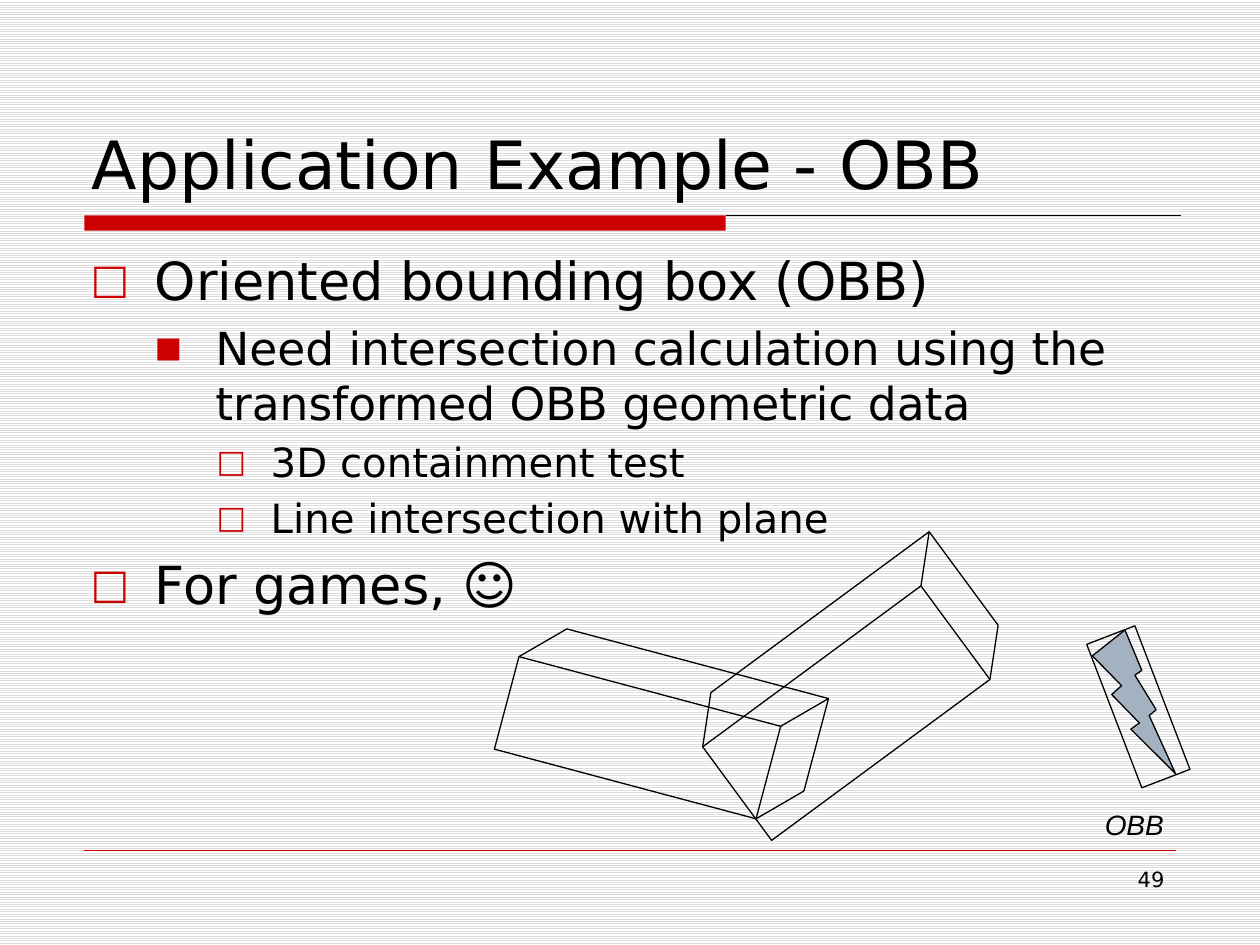
"""Build the slide about oriented bounding boxes."""
from typing import NamedTuple, Optional

from lxml import etree
from pptx import Presentation
from pptx import util as u
from pptx.dml.color import RGBColor
from pptx.enum import dml, shapes, text
from pptx.oxml import ns

COLOURS = {"ink": "000000", "accent": "CC0000", "bolt": "A3B2C1",
           "stripe": "DDDDDD", "paper": "FFFFFF"}
BODY_FONT = "DejaVu Sans"


class Level(NamedTuple):
    size: int
    indent: float
    hanging: float
    bullet: str
    bullet_percent: int


class Point(NamedTuple):
    level: int
    words: str


class Solid(NamedTuple):
    kind: shapes.MSO_SHAPE
    box: tuple
    rotation: float = 0
    depth: Optional[float] = None
    fill: Optional[str] = None
    outline: Optional[str] = "ink"


class Label(NamedTuple):
    words: str
    box: tuple
    size: int
    font: str = BODY_FONT
    italic: bool = False
    wrap: bool = True
    align: text.PP_ALIGN = text.PP_ALIGN.LEFT
    anchor: text.MSO_ANCHOR = text.MSO_ANCHOR.TOP


class Rule(NamedTuple):
    left: float
    right: float
    top: float
    colour: str
    width: float


LEVELS = [
    Level(30, 0.51, 0.51, "□", 78),
    Level(26, 0.99, 0.48, "■", 63),
    Level(23, 1.43, 0.43, "□", 78),
]
POINTS = [
    Point(0, "Oriented bounding box (OBB)"),
    Point(1, "Need intersection calculation using the transformed OBB geometric data"),
    Point(2, "3D containment test"),
    Point(2, "Line intersection with plane"),
    Point(0, "For games, ☺"),
]
BODY_BOX = (0.62, 1.92, 8.75, 4.67)
RULES = [
    Rule(5.76, 9.37, 1.71, "ink", 0.75),
    Rule(0.67, 9.33, 6.75, "accent", 0.25),
]
SOLIDS = [
    Solid(shapes.MSO_SHAPE.RECTANGLE, (0.67, 1.71, 5.09, 0.12), fill="accent", outline=None),
    Solid(shapes.MSO_SHAPE.LIGHTNING_BOLT, (8.67, 5, 0.66, 1.14), fill="bolt"),
    Solid(shapes.MSO_SHAPE.RECTANGLE, (8.83, 5, 0.41, 1.22), rotation=339),
    Solid(shapes.MSO_SHAPE.CUBE, (5.52, 4.83, 2.46, 1.23), rotation=323.6, depth=0.25),
    Solid(shapes.MSO_SHAPE.CUBE, (4.02, 5.21, 2.46, 1.07), rotation=14.9, depth=0.29),
]
LABELS = [
    Label("Application Example - OBB", (0.63, 0.33, 8.75, 1.33), 38,
          anchor=text.MSO_ANCHOR.BOTTOM),
    Label("OBB", (8.67, 6.36, 0.67, 0.37), 16, font="Arial", italic=True, wrap=False),
    Label("49", (7.17, 6.83, 2.17, 0.52), 12, align=text.PP_ALIGN.RIGHT),
]


def colour(name: str) -> RGBColor:
    """Return a named colour."""
    return RGBColor.from_string(COLOURS[name])


def inches(box: tuple) -> list:
    """Turn numbers into lengths."""
    return [u.Inches(value) for value in box]


def format_runs(paragraph, size: int, font: str, italic: bool = False) -> None:
    """Give every run of a paragraph its type."""
    for run in paragraph.runs:
        run.font.size = u.Pt(size)
        run.font.name = font
        run.font.italic = italic
        run.font.color.rgb = colour("ink")


def draw_rule(slide, rule: Rule) -> None:
    """Draw a horizontal rule."""
    left, right, top = inches((rule.left, rule.right, rule.top))
    line = slide.shapes.add_connector(shapes.MSO_CONNECTOR.STRAIGHT, left, top, right, top)
    line.line.color.rgb = colour(rule.colour)
    line.line.width = u.Pt(rule.width)
    etree.SubElement(line._element.spPr, ns.qn("a:effectLst"))


def draw_solid(slide, solid: Solid) -> None:
    """Draw a preset shape, turned and filled as described."""
    figure = slide.shapes.add_shape(solid.kind, *inches(solid.box))
    figure.shadow.inherit = False
    figure.rotation = solid.rotation
    if solid.depth is not None:
        figure.adjustments[0] = solid.depth
    if solid.fill:
        figure.fill.solid()
        figure.fill.fore_color.rgb = colour(solid.fill)
    else:
        figure.fill.background()
    if solid.outline:
        figure.line.color.rgb = colour(solid.outline)
        figure.line.width = u.Pt(0.75)
    else:
        figure.line.fill.background()


def draw_label(slide, label: Label) -> None:
    """Write a single line of text."""
    frame = slide.shapes.add_textbox(*inches(label.box)).text_frame
    frame.word_wrap = label.wrap
    frame.vertical_anchor = label.anchor
    frame.text = label.words
    frame.paragraphs[0].alignment = label.align
    format_runs(frame.paragraphs[0], label.size, label.font, label.italic)


def add_bullet(paragraph, level: Level) -> None:
    """Give a paragraph its hanging indent and bullet."""
    properties = paragraph._p.get_or_add_pPr()
    properties.set("marL", str(u.Inches(level.indent)))
    properties.set("indent", str(-u.Inches(level.hanging)))
    tint = etree.SubElement(properties, ns.qn("a:buClr"))
    etree.SubElement(tint, ns.qn("a:srgbClr"), val=COLOURS["accent"])
    etree.SubElement(properties, ns.qn("a:buSzPct"), val=str(level.bullet_percent * 1000))
    etree.SubElement(properties, ns.qn("a:buFont"), typeface=BODY_FONT)
    etree.SubElement(properties, ns.qn("a:buChar"), char=level.bullet)


def draw_points(slide, points: list) -> None:
    """Write the bulleted outline."""
    frame = slide.shapes.add_textbox(*inches(BODY_BOX)).text_frame
    frame.word_wrap = True
    frame.text = "\n".join(point.words for point in points)
    for paragraph, point in zip(frame.paragraphs, points):
        level = LEVELS[point.level]
        paragraph.level = point.level
        paragraph.space_before = u.Pt(0.2 * level.size)
        add_bullet(paragraph, level)
        format_runs(paragraph, level.size, BODY_FONT)


def main() -> None:
    """Assemble and save the slide."""
    deck = Presentation()
    deck.slide_width, deck.slide_height = inches((10, 7.5))
    slide = deck.slides.add_slide(deck.slide_layouts[6])
    backdrop = slide.background.fill
    backdrop.patterned()
    backdrop.pattern = dml.MSO_PATTERN.LIGHT_HORIZONTAL
    backdrop.fore_color.rgb = colour("stripe")
    backdrop.back_color.rgb = colour("paper")
    for rule in RULES:
        draw_rule(slide, rule)
    draw_points(slide, POINTS)
    for solid in SOLIDS:
        draw_solid(slide, solid)
    for label in LABELS:
        draw_label(slide, label)
    deck.save("out.pptx")


if __name__ == "__main__":
    main()
